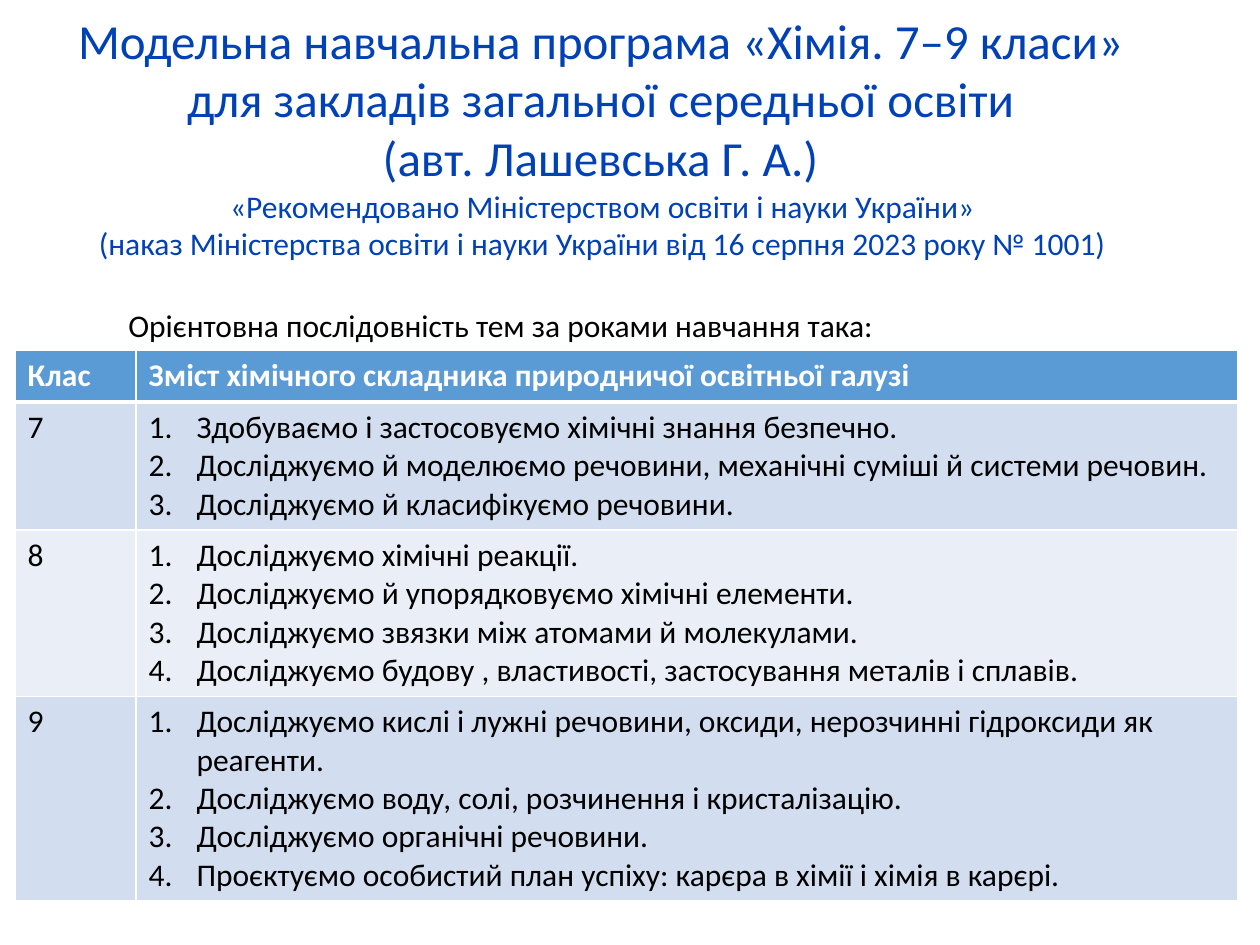
from lxml import etree
from pptx import Presentation
from pptx import util as u
from pptx.dml.color import RGBColor
from pptx.enum import text
from pptx.oxml import ns

COLORS = {"title": "0041B6", "body": "000000", "white": "FFFFFF",
          "header": "5B9BD5", "odd": "D2DEEF", "even": "EAEFF7"}
TITLE = [
    ("Модельна навчальна програма «Хімія. 7–9 класи» ", 28),
    ("для закладів загальної середньої освіти ", 28),
    ("(авт. Лашевська Г. А.) ", 28),
    ("«Рекомендовано Міністерством освіти і науки України» ", 18),
    ("(наказ Міністерства освіти і науки України від 16 серпня 2023 року № 1001) ", 18),
]
INTRO = "Орієнтовна послідовність тем за роками навчання така:"
HEADINGS = ["Клас", "Зміст хімічного складника природничої освітньої галузі"]
TOPICS = {
    "7": ["Здобуваємо і застосовуємо хімічні знання безпечно.",
          "Досліджуємо й моделюємо речовини, механічні суміші й системи речовин.",
          "Досліджуємо й класифікуємо речовини."],
    "8": ["Досліджуємо хімічні реакції.",
          "Досліджуємо й упорядковуємо хімічні елементи.",
          "Досліджуємо звязки між атомами й молекулами.",
          "Досліджуємо будову , властивості, застосування металів і сплавів."],
    "9": ["Досліджуємо кислі і лужні речовини, оксиди, нерозчинні гідроксиди як реагенти.",
          "Досліджуємо воду, солі, розчинення і кристалізацію.",
          "Досліджуємо органічні речовини.",
          "Проєктуємо особистий план успіху: карєра в хімії і хімія в карєрі."],
}
COLUMN_WIDTHS = [0.96, 8.74]
ROW_HEIGHTS = [0.41, 1.0, 1.3, 1.6]


def rgb(name):
    return RGBColor.from_string(COLORS[name])


def write(frame, lines, color, bold=False, align=text.PP_ALIGN.LEFT, numbered=False):
    """Fill a text frame with (line, size) paragraphs."""
    for index, (line, size) in enumerate(lines):
        paragraph = frame.add_paragraph() if index else frame.paragraphs[0]
        paragraph.alignment = align
        if numbered:
            number(paragraph)
        run = paragraph.add_run()
        run.text = line
        formats = {"name": "Calibri", "size": u.Pt(size), "bold": bold}
        for key, value in formats.items():
            setattr(run.font, key, value)
        run.font.color.rgb = rgb(color)


def number(paragraph):
    """Give a paragraph an automatic number and a hanging indent."""
    properties = paragraph._p.get_or_add_pPr()
    indent = u.Inches(0.38)
    properties.set("marL", str(indent))
    properties.set("indent", str(-indent))
    etree.SubElement(properties, ns.qn("a:buFont"), typeface="+mj-lt")
    etree.SubElement(properties, ns.qn("a:buAutoNum"), type="arabicPeriod")


def place(box, left, top, width, height):
    """Set position and size in inches and wrap the text from the top."""
    sides = {"left": left, "top": top, "width": width, "height": height}
    for key, value in sides.items():
        setattr(box, key, u.Inches(value))
    formats = {"word_wrap": True, "auto_size": text.MSO_AUTO_SIZE.NONE,
               "vertical_anchor": text.MSO_ANCHOR.TOP}
    for key, value in formats.items():
        setattr(box.text_frame, key, value)


def style_cell(cell, fill, edges):
    """Fill a cell and draw its white borders, widths in points."""
    cell.fill.solid()
    cell.fill.fore_color.rgb = rgb(fill)
    properties = cell._tc.get_or_add_tcPr()
    for index, (side, width) in enumerate(edges.items()):
        line = etree.Element(ns.qn(f"a:ln{side}"), w=str(u.Pt(width)))
        solid = etree.SubElement(line, ns.qn("a:solidFill"))
        etree.SubElement(solid, ns.qn("a:srgbClr"), val=COLORS["white"])
        properties.insert(index, line)


def add_topics(slide):
    """Add the table of topics by school year."""
    table = slide.shapes.add_table(
        len(ROW_HEIGHTS), len(COLUMN_WIDTHS), u.Inches(0.12), u.Inches(2.78),
        u.Inches(sum(COLUMN_WIDTHS)), u.Inches(sum(ROW_HEIGHTS))).table
    for column, width in zip(table.columns, COLUMN_WIDTHS):
        column.width = u.Inches(width)
    for row, height in zip(table.rows, ROW_HEIGHTS):
        row.height = u.Inches(height)

    for column, heading in enumerate(HEADINGS):
        cell = table.cell(0, column)
        write(cell.text_frame, [(heading, 18)], "white", bold=True)
        style_cell(cell, "header", {"L": 1, "R": 1, "T": 1, "B": 3})

    for row, (grade, topics) in enumerate(TOPICS.items(), start=1):
        grade_cell, topics_cell = table.cell(row, 0), table.cell(row, 1)
        write(grade_cell.text_frame, [(grade, 18)], "body")
        write(topics_cell.text_frame, [(topic, 18) for topic in topics], "body",
              numbered=True)
        edges = {"L": 1, "R": 1, "T": 3 if row == 1 else 1, "B": 1}
        for cell in (grade_cell, topics_cell):
            style_cell(cell, "odd" if row % 2 else "even", edges)


def main():
    """Build the slide and save it."""
    deck = Presentation()
    deck.slide_width, deck.slide_height = u.Inches(10), u.Inches(7.5)
    slide = deck.slides.add_slide(deck.slide_layouts[5])

    title = slide.shapes.title
    place(title, 0.12, 0.03, 9.38, 2.12)
    write(title.text_frame, TITLE, "title", align=text.PP_ALIGN.CENTER)

    intro = slide.shapes.add_textbox(0, 0, 0, 0)
    place(intro, 0.92, 2.38, 7.83, 0.4)
    write(intro.text_frame, [(INTRO, 18)], "body")

    add_topics(slide)
    deck.save("out.pptx")


if __name__ == "__main__":
    main()
